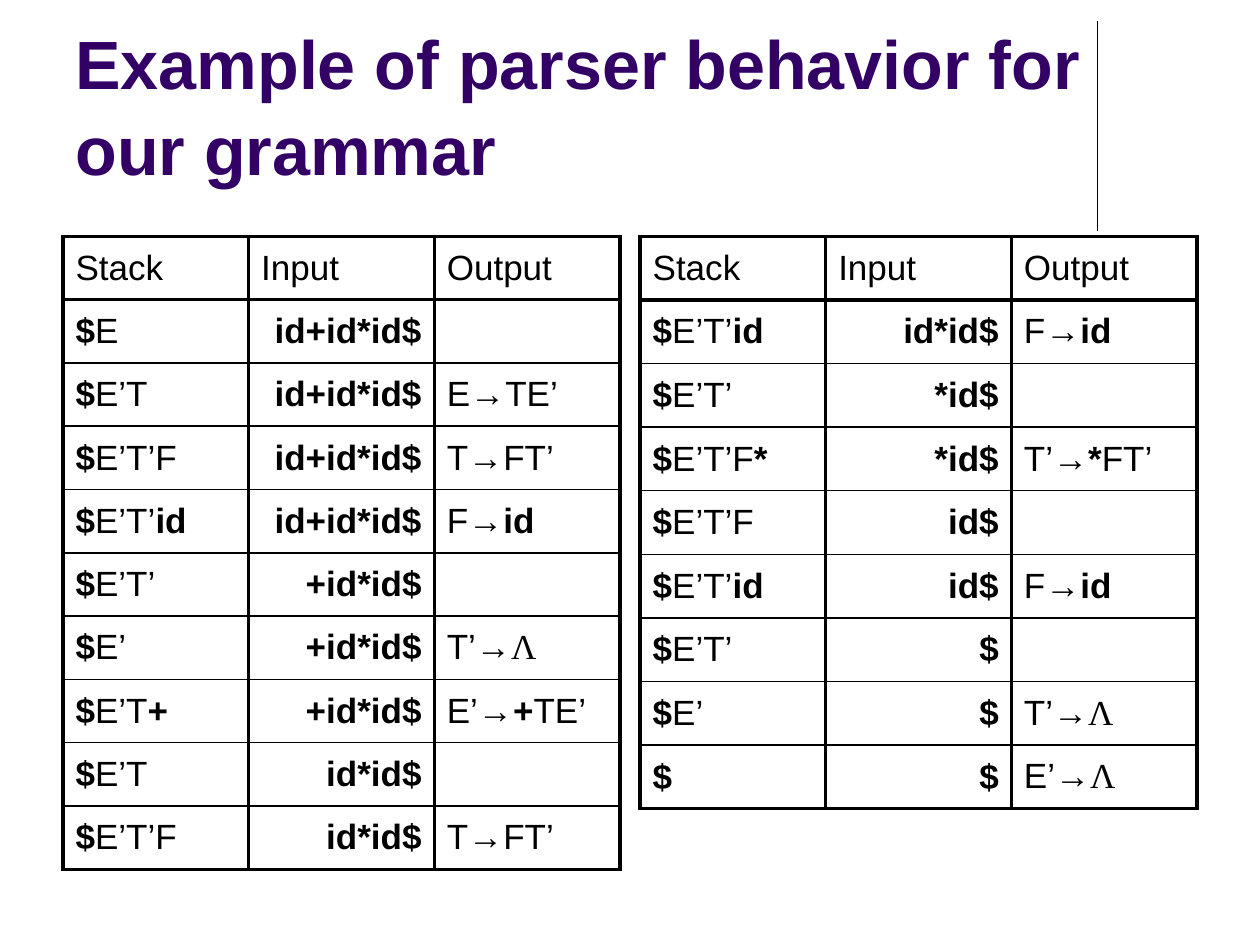
from itertools import groupby

from lxml import etree
from pptx import Presentation
from pptx.dml.color import RGBColor
from pptx.enum.shapes import MSO_CONNECTOR
from pptx.enum.text import MSO_ANCHOR, PP_ALIGN
from pptx.oxml.ns import qn
from pptx.util import Inches, Pt

STRAIGHT = MSO_CONNECTOR.STRAIGHT
MIDDLE, BOTTOM = MSO_ANCHOR.MIDDLE, MSO_ANCHOR.BOTTOM
LEFT, RIGHT = PP_ALIGN.LEFT, PP_ALIGN.RIGHT

BLACK, PURPLE = "000000", "330066"
TERMINALS = "$id+*"
THICK, THIN = 2.25, 1

HEADER = ("Stack", "Input", "Output")
FIRST_STEPS = [
    HEADER,
    ("$E", "id+id*id$", ""),
    ("$E’T", "id+id*id$", "E→TE’"),
    ("$E’T’F", "id+id*id$", "T→FT’"),
    ("$E’T’id", "id+id*id$", "F→id"),
    ("$E’T’", "+id*id$", ""),
    ("$E’", "+id*id$", "T’→Λ"),
    ("$E’T+", "+id*id$", "E’→+TE’"),
    ("$E’T", "id*id$", ""),
    ("$E’T’F", "id*id$", "T→FT’"),
]
LAST_STEPS = [
    HEADER,
    ("$E’T’id", "id*id$", "F→id"),
    ("$E’T’", "*id$", ""),
    ("$E’T’F*", "*id$", "T’→*FT’"),
    ("$E’T’F", "id$", ""),
    ("$E’T’id", "id$", "F→id"),
    ("$E’T’", "$", ""),
    ("$E’", "$", "T’→Λ"),
    ("$", "$", "E’→Λ"),
]


def color(value):
    """Turn a hex string into a colour."""
    return RGBColor.from_string(value)


def write(paragraph, text, size=20, font="Arial", fill=BLACK, bold=False, align=LEFT):
    """Append a formatted run to a paragraph."""
    paragraph.alignment = align
    run = paragraph.add_run()
    run.text = text
    run.font.size = Pt(size)
    run.font.name = font
    run.font.bold = bold
    run.font.color.rgb = color(fill)


def write_symbols(paragraph, text, align):
    """Write grammar text with bold terminals and a serif lambda."""
    for (bold, serif), symbols in groupby(text, lambda s: (s in TERMINALS, s == "Λ")):
        font = "Times New Roman" if serif else "Arial"
        write(paragraph, "".join(symbols), font=font, bold=bold, align=align)


def set_borders(cell, top, bottom):
    """Give a cell thick sides and the given top and bottom widths."""
    properties = cell._tc.get_or_add_tcPr()
    widths = {"a:lnL": THICK, "a:lnR": THICK, "a:lnT": top, "a:lnB": bottom}
    for index, (tag, width) in enumerate(widths.items()):
        line = etree.Element(qn(tag), w=str(Pt(width)))
        fill = etree.SubElement(line, qn("a:solidFill"))
        etree.SubElement(fill, qn("a:srgbClr"), val=BLACK)
        properties.insert(index, line)


class GridSlide:
    """Draw elements on a slide divided into 40 columns and 60 rows."""

    def __init__(self, presentation):
        """Add a blank slide and measure its grid."""
        self.slide = presentation.slides.add_slide(presentation.slide_layouts[6])
        self.column = presentation.slide_width / 40
        self.row = presentation.slide_height / 60

    def place(self, column, row, columns, rows):
        """Convert grid units into slide lengths."""
        return (int(column * self.column), int(row * self.row),
                int(columns * self.column), int(rows * self.row))

    def title(self, text, *area):
        """Add the bold heading."""
        frame = self.slide.shapes.add_textbox(*self.place(*area)).text_frame
        frame.word_wrap = True
        frame.vertical_anchor = BOTTOM
        paragraph = frame.paragraphs[0]
        paragraph.line_spacing = 1.05
        write(paragraph, text, size=39, fill=PURPLE, bold=True)

    def rule(self, *ends):
        """Add a thin straight line between two grid points."""
        line = self.slide.shapes.add_connector(STRAIGHT, *self.place(*ends))
        line.line.color.rgb = color(BLACK)
        line.line.width = Pt(0.75)
        etree.SubElement(line._element.spPr, qn("a:effectLst"))

    def parse_table(self, steps, column, row, columns, row_height):
        """Add a table of parser steps under a heading row."""
        area = self.place(column, row, columns, row_height * len(steps))
        table = self.slide.shapes.add_table(len(steps), len(HEADER), *area).table
        table.first_row = table.horz_banding = False
        last = len(steps) - 1
        for row_index, step in enumerate(steps):
            top = THICK if row_index <= 1 else THIN
            bottom = THICK if row_index in (0, last) else THIN
            for column_index, text in enumerate(step):
                cell = table.cell(row_index, column_index)
                cell.fill.background()
                cell.vertical_anchor = MIDDLE
                align = RIGHT if row_index and column_index == 1 else LEFT
                write_symbols(cell.text_frame.paragraphs[0], text, align)
                set_borders(cell, top, bottom)


def main():
    """Build and save the parser slide."""
    presentation = Presentation()
    presentation.slide_width = Inches(10)
    presentation.slide_height = Inches(7.5)
    slide = GridSlide(presentation)
    slide.rule(34.84, 1.36, 34.84, 14.64)
    slide.title("Example of parser behavior for our grammar", 2, 1.04, 33, 11.36)
    slide.parse_table(FIRST_STEPS, 2, 15, 17.68, 4.02)
    slide.parse_table(LAST_STEPS, 20.32, 15, 17.68, 4.04)
    presentation.save("out.pptx")


if __name__ == "__main__":
    main()
